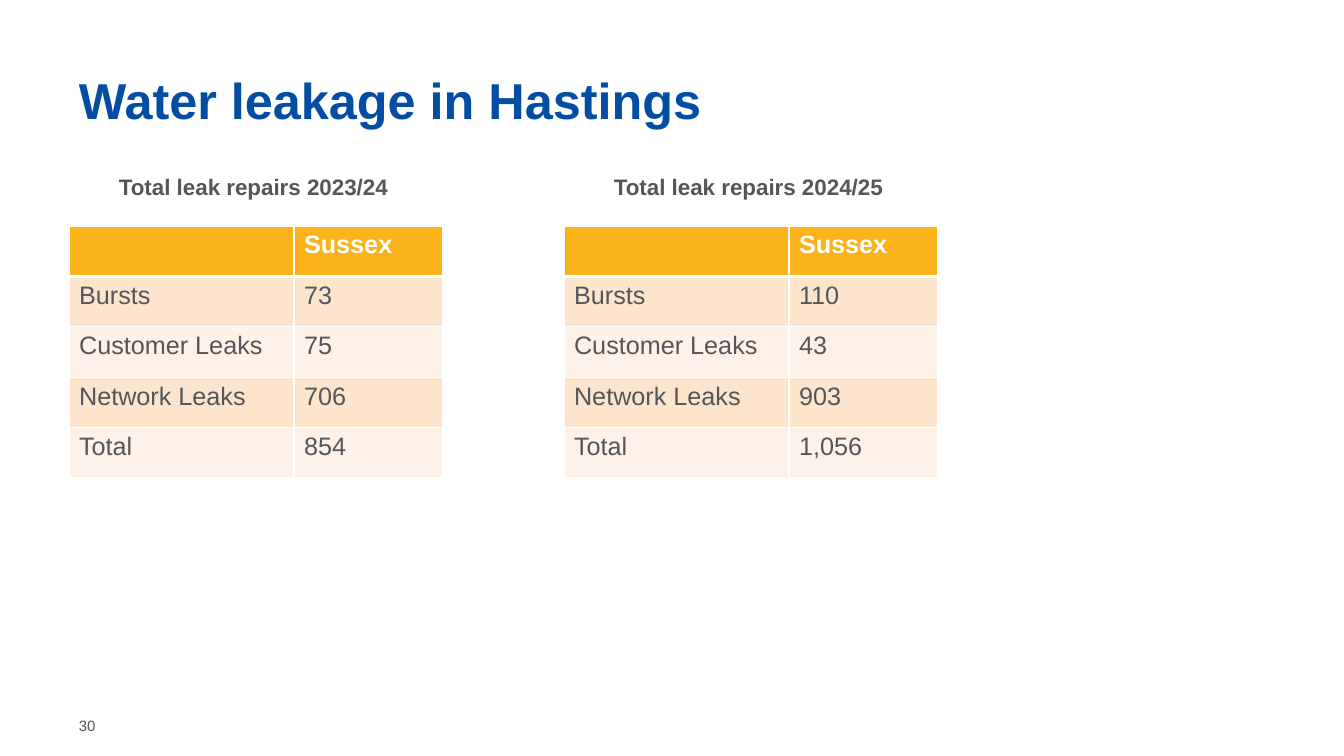
import pptx
import pptx.dml.color
import pptx.enum.text
import pptx.oxml
import pptx.oxml.ns
import pptx.util

EMU_PER_PX = 914400 / 100.8
COLORS = {
    "title": "034EA2",
    "text": "53565A",
    "white": "FFFFFF",
    "header": "FAB31A",
    "band_dark": "FDE5CD",
    "band_light": "FEF2E8",
}
LEAK_TYPES = ["Bursts", "Customer Leaks", "Network Leaks", "Total"]
REPAIRS = [
    ("2023/24", 69, ["73", "75", "706", "854"]),
    ("2024/25", 564, ["110", "43", "903", "1,056"]),
]


def px(length):
    """Turn a length in px into EMU."""
    return pptx.util.Emu(round(length * EMU_PER_PX))


def color(name):
    """Return the named colour."""
    return pptx.dml.color.RGBColor.from_string(COLORS[name])


def add_span(para, text, size, color_name, bold=False):
    """Add one formatted run to a paragraph."""
    span = para.add_run()
    span.text = text
    span.font.name = "Arial"
    span.font.size = pptx.util.Pt(size)
    span.font.bold = bold
    span.font.color.rgb = color(color_name)


def add_text(page, box, text, size, color_name, bold=False):
    """Add a one-line text box and return its frame."""
    frame = page.shapes.add_textbox(*map(px, box)).text_frame
    frame.word_wrap = True
    add_span(frame.paragraphs[0], text, size, color_name, bold)
    return frame


def set_borders(cell, top, bottom):
    """Draw white cell borders, 1 pt at the sides and as given above and below."""
    properties = cell._tc.get_or_add_tcPr()
    for index, (side, points) in enumerate(zip("LRTB", (1, 1, top, bottom))):
        line = pptx.oxml.parse_xml(
            f'<a:ln{side} {pptx.oxml.ns.nsdecls("a")} w="{pptx.util.Pt(points)}">'
            f'<a:solidFill><a:srgbClr val="{COLORS["white"]}"/></a:solidFill></a:ln{side}>'
        )
        properties.insert(index, line)


def add_repairs_table(page, box, counts):
    """Add the table of leak repairs in the given box."""
    rows = [("", "Sussex"), *zip(LEAK_TYPES, counts)]
    table = page.shapes.add_table(len(rows), 2, *map(px, box)).table
    table.horz_banding = False
    table.columns[0].width = px(225)
    table.columns[1].width = px(box[2] - 225)
    for row_index, row in enumerate(rows):
        is_header = row_index == 0
        band = "band_dark" if row_index % 2 else "band_light"
        for column_index, text in enumerate(row):
            cell = table.cell(row_index, column_index)
            cell.fill.solid()
            cell.fill.fore_color.rgb = color("header" if is_header else band)
            set_borders(cell, 3 if row_index == 1 else 1, 3 if is_header else 1)
            if text:
                add_span(cell.text_frame.paragraphs[0], text, 18,
                         "white" if is_header else "text", is_header)


def add_repairs_panel(page, box, year, counts):
    """Add the caption and table for one year."""
    left, top, width, height = box
    add_text(page, (left + 40, top, 292, 37), f"Total leak repairs {year}", 16, "text", True)
    add_repairs_table(page, (left, top + 58, width, height - 58), counts)


def add_leakage_slide(deck):
    """Add the slide on water leakage."""
    page = deck.slides.add_slide(deck.slide_layouts[6])
    title = add_text(page, (69, 69, 1207, 58), "Water leakage in Hastings", 36, "title", True)
    title.paragraphs[0].line_spacing = pptx.util.Pt(40)
    for year, left, counts in REPAIRS:
        add_repairs_panel(page, (left, 168, 374, 310), year, counts)
    number = add_text(page, (69, 706, 52, 40), "30", 10.7, "text")
    number.vertical_anchor = pptx.enum.text.MSO_ANCHOR.MIDDLE


def main():
    """Build and save the deck."""
    deck = pptx.Presentation()
    deck.slide_width = px(1344)
    deck.slide_height = px(756)
    add_leakage_slide(deck)
    deck.save("out.pptx")


if __name__ == "__main__":
    main()
